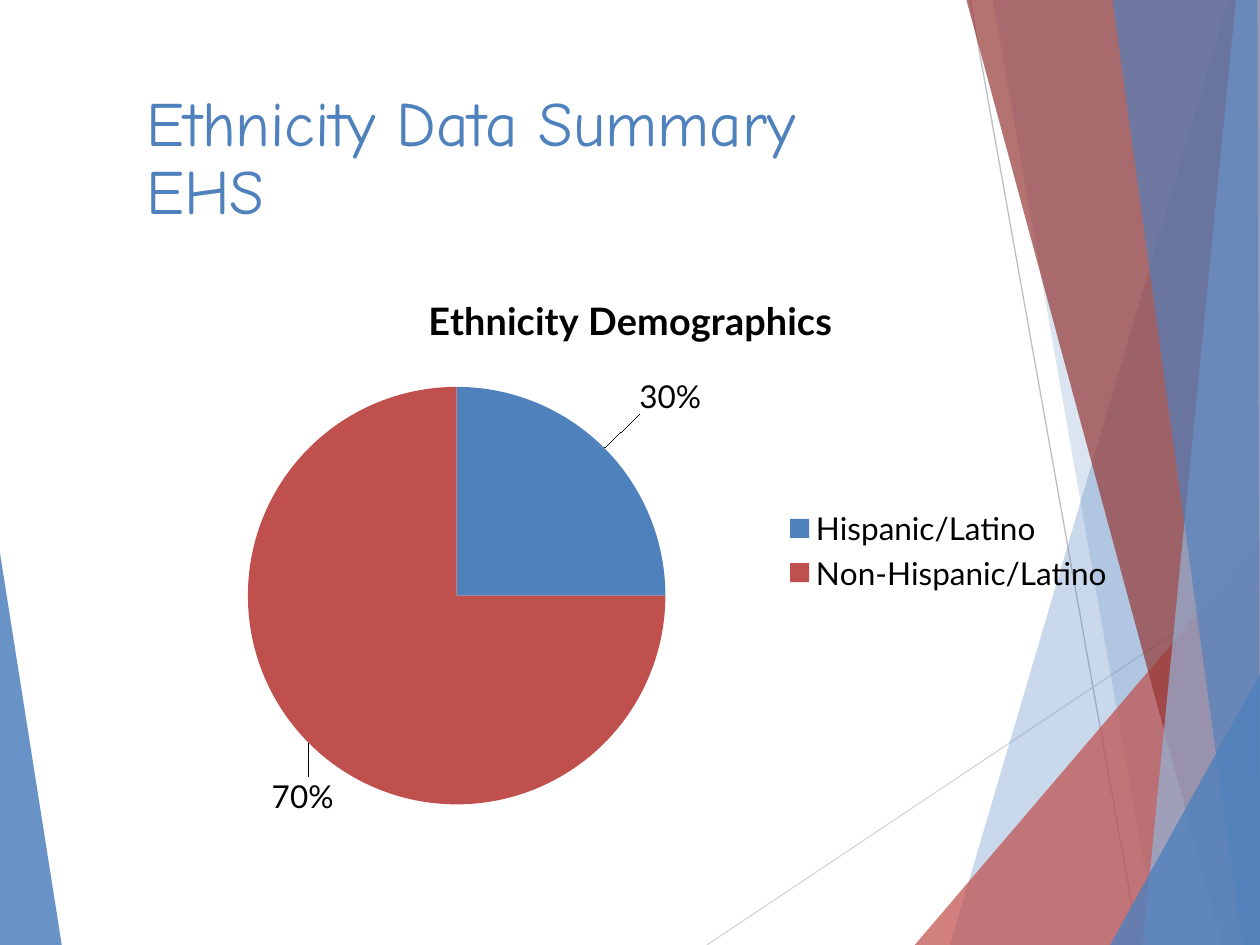
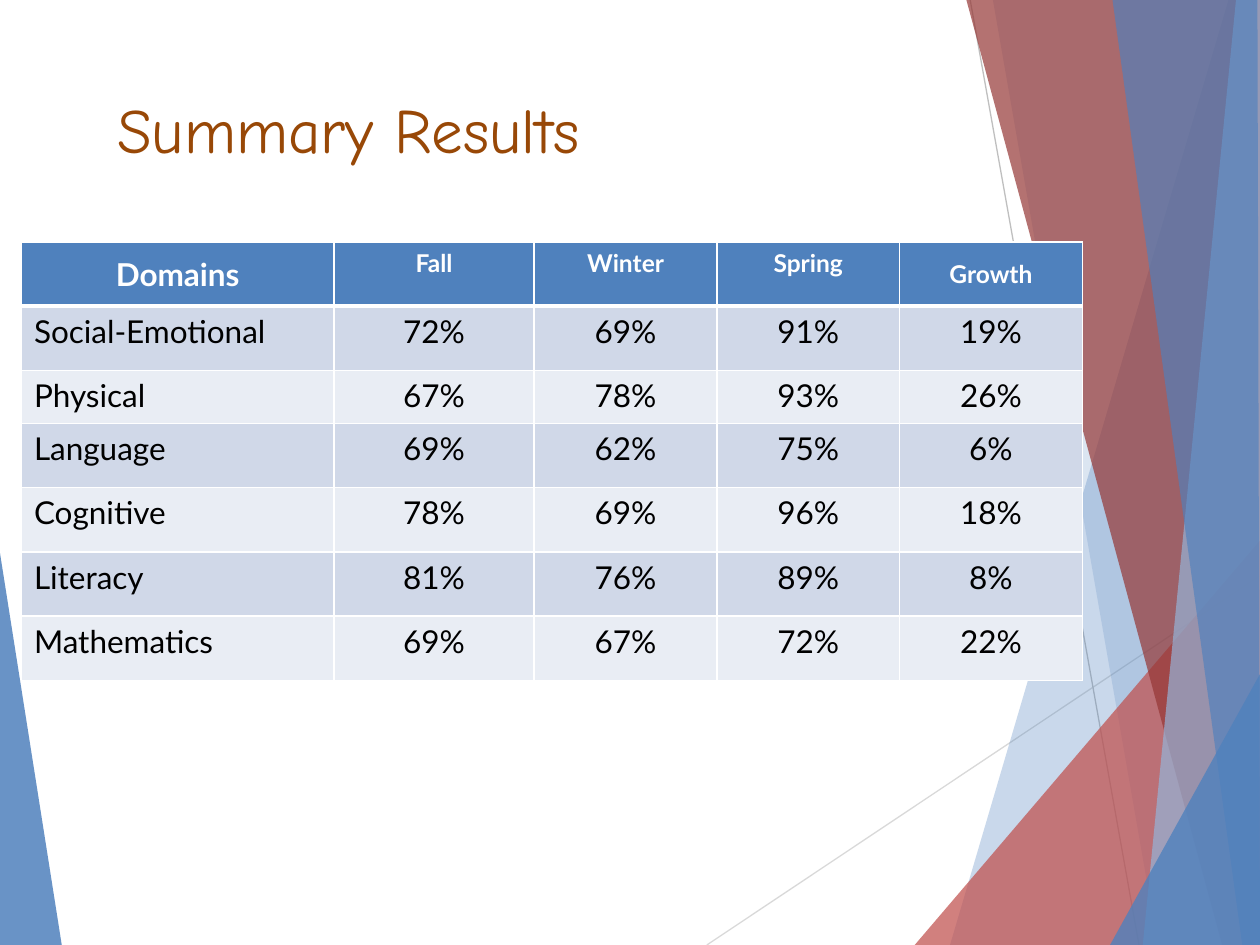
from copy import deepcopy
from lxml.etree import SubElement as Sub
from pptx import Presentation
from pptx.chart.data import CategoryChartData as Data
from pptx.dml.color import RGBColor as Rgb
from pptx.enum.chart import XL_CHART_TYPE as Kind, XL_LEGEND_POSITION as Spot
from pptx.enum.shapes import MSO_CONNECTOR as Link
from pptx.enum.text import MSO_ANCHOR as Anchor, MSO_AUTO_SIZE as Fit, PP_ALIGN as Align
from pptx.oxml import parse_xml as to_xml
from pptx.oxml.ns import qn
from pptx.util import Inches, Pt

HUES = {
    "blue": "4F81BD", "red": "C0504D", "wine": "953735", "sky": "95B3D7",
    "brown": "984807", "pale": "D9D9D9", "grey": "BFBFBF",
    "odd": "D0D8E8", "even": "E9EDF4", "white": "FFFFFF", "black": "000000",
}
HEAD, BODY = "Comic Neue", "Lato"
COLS, ROWS = 100, 75
WIDE, HIGH = Inches(10), Inches(7.5)
CHART_NS = "http://schemas.openxmlformats.org/drawingml/2006/chart"

RAYS = [((56.1, 75), (100, 45.7), "pale"), ((77, 0), (90.4, 75), "grey")]
BANDS = [
    ("blue", 85, [(0, 43.9), (4.9, 75), (0, 75)]),
    ("blue", 30, [(97.5, 0), (75.4, 75), (100, 75), (100, 0)]),
    ("blue", 20, [(78.8, 0), (91.9, 75), (100, 75), (100, 0)]),
    ("red", 72, [(72.6, 75), (100, 42.9), (100, 75)]),
    ("wine", 70, [(76.7, 0), (97, 75), (100, 75), (100, 0)]),
    ("sky", 70, [(98.1, 0), (90.7, 75), (100, 75), (100, 0)]),
    ("blue", 65, [(88.3, 0), (98.6, 75), (100, 75), (99.8, 0)]),
    ("blue", 80, [(88.1, 75), (100, 53.5), (100, 75)]),
]
SHARES = [("Hispanic/Latino", 25, "30%", "blue", (0.03, -0.05)),
          ("Non-Hispanic/Latino", 75, "70%", "red", (0.03, 0.05))]
SCORES = [
    ("Domains", "Fall", "Winter", "Spring", "Growth"),
    ("Social-Emotional", "72%", "69%", "91%", "19%"),
    ("Physical", "67%", "78%", "93%", "26%"),
    ("Language", "69%", "62%", "75%", "6%"),
    ("Cognitive", "78%", "69%", "96%", "18%"),
    ("Literacy", "81%", "76%", "89%", "8%"),
    ("Mathematics", "69%", "67%", "72%", "22%"),
]


def hue(name):
    """Turn a colour name into a colour."""
    return Rgb.from_string(HUES[name])


def grid(*cells):
    """Turn alternating columns and rows into lengths."""
    return [int((HIGH / ROWS if i % 2 else WIDE / COLS) * c) for i, c in enumerate(cells)]


def write(frame, text, size=18, font=BODY, color="black", bold=False,
          align=None, space=None, edge=None):
    """Put formatted text in the first paragraph of a frame."""
    para = frame.paragraphs[0]
    para.text = text
    para.alignment, para.line_spacing = align, space
    for run in para.runs:
        face = run.font
        face.size, face.name, face.bold = Pt(size), font, bold
        face.color.rgb = hue(color)
        if edge:
            line = to_xml('<a:ln xmlns:a="http://schemas.openxmlformats.org/drawingml/2006/main"'
                          ' w="9525"><a:solidFill><a:srgbClr/></a:solidFill></a:ln>')
            line[0][0].set("val", HUES[edge])
            run._r.rPr.insert(0, line)
    for gap in para._p.findall(qn("a:br")):
        gap.append(deepcopy(para.runs[0]._r.rPr))


def layout(x, y, w=None, h=None):
    """Make a manual chart layout from shares of the chart."""
    node = to_xml(f'<c:layout xmlns:c="{CHART_NS}"><c:manualLayout/></c:layout>')
    parts = [("x", x), ("y", y)]
    if w:
        parts = [("layoutTarget", "inner"), ("xMode", "edge"), ("yMode", "edge"),
                 *parts, ("w", w), ("h", h)]
    for tag, val in parts:
        Sub(node[0], qn(f"c:{tag}")).set("val", str(val))
    return node


class Deck:
    """Hold the style and the current slide."""

    def __init__(self):
        """Set up the file and its title-only layout."""
        self.file = Presentation()
        self.file.slide_width, self.file.slide_height = WIDE, HIGH
        self.base = self.file.slide_layouts[5]
        self.slide = None

    def page(self):
        """Start a slide, drawing the shared bands the first time."""
        first = self.slide is None
        self.slide = self.file.slides.add_slide(self.base)
        if first:
            art = [self.band(*BANDS[0])]
            art += [self.ray(*ray) for ray in RAYS]
            art += [self.band(*band) for band in BANDS[1:]]
            for item in art:
                self.base.shapes._spTree.append(item._element)

    def band(self, color, alpha, spots):
        """Draw a see-through polygon."""
        spots = [grid(*spot) for spot in spots]
        pen = self.slide.shapes.build_freeform(*spots[0], scale=1.0)
        pen.add_line_segments(spots[1:], close=True)
        shape = pen.convert_to_shape()
        shape.shadow.inherit = False
        shape.fill.solid()
        shape.fill.fore_color.rgb = hue(color)
        shape.line.fill.background()
        tint = shape._element.spPr.find(".//" + qn("a:srgbClr"))
        Sub(tint, qn("a:alpha")).set("val", str(alpha * 1000))
        return shape

    def ray(self, start, end, color):
        """Draw a thin line."""
        line = self.slide.shapes.add_connector(Link.STRAIGHT, *grid(*start, *end))
        line.line.color.rgb, line.line.width = hue(color), Pt(0.75)
        Sub(line._element.spPr, qn("a:effectLst"))
        return line

    def title(self, text, box, **look):
        """Place and fill the title."""
        head = self.slide.shapes.title
        head.left, head.top, head.width, head.height = grid(*box)
        frame = head.text_frame
        frame.auto_size, frame.word_wrap = Fit.NONE, True
        frame.vertical_anchor = Anchor.MIDDLE
        write(frame, text, size=36, font=HEAD, align=Align.LEFT, **look)

    def pie(self, name, shares, box):
        """Add a pie chart with labels led out of it."""
        data = Data()
        data.categories = [share[0] for share in shares]
        data.add_series("Series 1", [share[1] for share in shares])
        chart = self.slide.shapes.add_chart(Kind.PIE, *grid(*box), data).chart
        chart.font.size, chart.font.name = Pt(18), BODY
        chart.font.color.rgb = hue("black")
        chart.has_title = chart.has_legend = True
        write(chart.chart_title.text_frame, name, size=21.6, bold=True)
        chart.legend.position, chart.legend.include_in_layout = Spot.RIGHT, False
        area = chart._chartSpace.chart.plotArea
        for old in area.findall(qn("c:layout")):
            area.remove(old)
        area.insert(0, layout(0.115, 0.21, 0.42, 0.74))
        plot = chart.plots[0]
        plot.vary_by_categories = True
        row = plot.series[0]
        row.data_labels.show_percentage = True
        row.data_labels.show_value = False
        for i, (_, _, label, color, shift) in enumerate(shares):
            point = row.points[i]
            point.format.fill.solid()
            point.format.fill.fore_color.rgb = hue(color)
            write(point.data_label.text_frame, label)
            node = row._element.findall(".//" + qn("c:dLbl"))[i]
            node.insert(1, layout(*shift))

    def table(self, rows, box, widths, heights):
        """Add a banded table with white rules."""
        grill = self.slide.shapes.add_table(len(rows), len(rows[0]), *grid(*box)).table
        for col, wide in zip(grill.columns, widths):
            col.width = grid(wide)[0]
        for row, high in zip(grill.rows, heights):
            row.height = grid(0, high)[1]
        for r, row in enumerate(rows):
            for c, text in enumerate(row):
                self.cell(grill.cell(r, c), text, r, c, len(row) - 1)

    def cell(self, cell, text, r, c, last):
        """Fill, rule and label one cell."""
        top = r == 0
        for side in "LRTB":
            rule = Sub(cell._tc.get_or_add_tcPr(), qn(f"a:ln{side}"))
            rule.set("w", str(Pt(3 if top and side == "B" or r == 1 and side == "T" else 1)))
            Sub(Sub(rule, qn("a:solidFill")), qn("a:srgbClr")).set("val", HUES["white"])
        cell.fill.solid()
        cell.fill.fore_color.rgb = hue("blue" if top else "odd" if r % 2 else "even")
        if top and c in (0, last):
            cell.vertical_anchor = Anchor.MIDDLE
        write(cell.text_frame, text, size=14 if top and c else 18, bold=top,
              color="white" if top else "black",
              align=Align.CENTER if top or c else Align.LEFT)


def main():
    """Build both slides and save them."""
    deck = Deck()
    deck.page()
    deck.title("Ethnicity Data Summary\nEHS", (10.6, 6.7, 83.6, 12),
               color="blue", edge="blue", space=0.9)
    deck.pie("Ethnicity Demographics", SHARES, (10.6, 21.3, 78.9, 44.8))
    deck.page()
    deck.title("Summary Results", (8.3, 5.8, 90, 8.8), color="brown")
    deck.table(SCORES, (1.7, 19.2, 84.2, 34.9), [24.8, 15.9] + [14.5] * 3,
               [5.1, 5.1, 4.2] + [5.1] * 4)
    deck.file.save("out.pptx")


if __name__ == "__main__":
    main()
